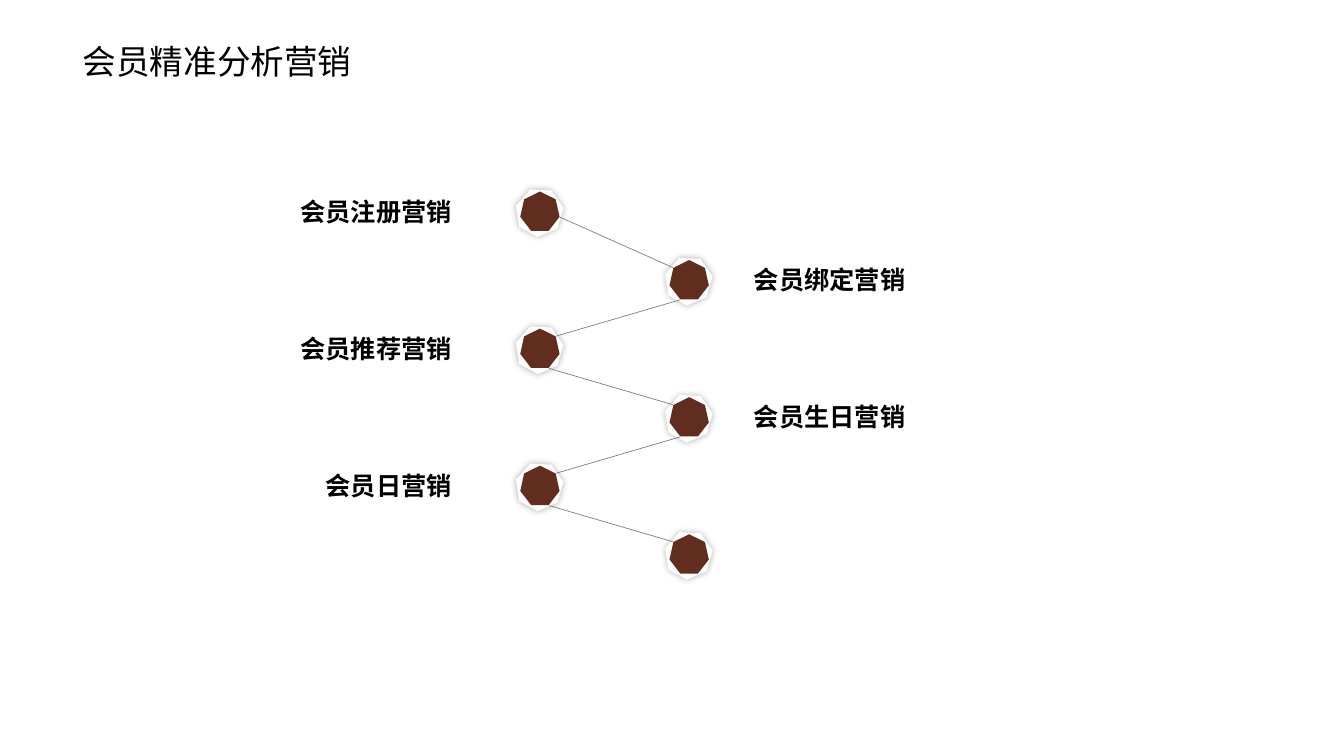
from lxml.etree import SubElement
from pptx import Presentation
from pptx.dml.color import RGBColor
from pptx.enum.shapes import MSO_CONNECTOR, MSO_SHAPE
from pptx.enum.text import MSO_ANCHOR, MSO_AUTO_SIZE, PP_ALIGN
from pptx.oxml.ns import qn
from pptx.util import Inches, Pt

BLACK = RGBColor(0x00, 0x00, 0x00)
WHITE = RGBColor(0xFF, 0xFF, 0xFF)
BROWN = RGBColor(0x61, 0x2D, 0x1F)
GREY = RGBColor(0x80, 0x80, 0x80)
FONT = "Noto Sans CJK SC"

STAGES = ["会员注册营销", "会员绑定营销", "会员推荐营销", "会员生日营销", "会员日营销", ""]
ZIGZAG_BOX = (5.16, 1.9, 1.87, 3.79)
NODE = 0.39
HALO = 0.47
LABEL_HEIGHT = 0.4


def write(frame, words, size, bold, align):
    """Put one formatted line of words into a text frame."""
    frame.text = words
    frame.word_wrap = True
    frame.auto_size = MSO_AUTO_SIZE.NONE
    frame.vertical_anchor = MSO_ANCHOR.MIDDLE
    line = frame.paragraphs[0]
    line.alignment = align
    font = line.runs[0].font
    font.size, font.bold, font.name = Pt(size), bold, FONT
    font.color.rgb = BLACK
    SubElement(line.runs[0]._r.get_or_add_rPr(), qn("a:ea"), typeface=FONT)


def add_heading(slide, words, left, top, width, height):
    """Place the slide title in its box."""
    title = slide.shapes.title
    title.left, title.top = Inches(left), Inches(top)
    title.width, title.height = Inches(width), Inches(height)
    write(title.text_frame, words, 24, False, PP_ALIGN.LEFT)


def add_heptagon(slide, x, y, size, color):
    """Draw a plain heptagon centred on a point."""
    heptagon = slide.shapes.add_shape(
        MSO_SHAPE.HEPTAGON, Inches(x - size / 2), Inches(y - size / 2),
        Inches(size), Inches(size))
    heptagon.shadow.inherit = False
    heptagon.fill.solid()
    heptagon.fill.fore_color.rgb = color
    heptagon.line.fill.background()
    return heptagon


def add_node(slide, x, y):
    """Draw a brown node on a white halo with a soft shadow."""
    halo = add_heptagon(slide, x, y, HALO, WHITE)
    halo.rotation = 29
    effects = halo._element.spPr.find(qn("a:effectLst"))
    shadow = SubElement(effects, qn("a:outerShdw"), blurRad=str(Pt(5)), dist="0")
    tone = SubElement(shadow, qn("a:srgbClr"), val="000000")
    SubElement(tone, qn("a:alpha"), val="30000")
    add_heptagon(slide, x, y, NODE, BROWN)


def add_label(slide, words, left, y, width, align):
    """Write a stage name centred vertically on its node."""
    label = slide.shapes.add_textbox(
        Inches(left), Inches(y - LABEL_HEIGHT / 2), Inches(width), Inches(LABEL_HEIGHT))
    write(label.text_frame, words, 18, True, align)


def add_link(slide, start, end):
    """Draw a thin line between two points."""
    link = slide.shapes.add_connector(
        MSO_CONNECTOR.STRAIGHT, *(Inches(length) for length in (*start, *end)))
    link.line.color.rgb = GREY
    link.line.width = Pt(0.5)
    SubElement(link._element.spPr, qn("a:effectLst"))


def add_zigzag(slide, stages, left, top, width, height):
    """Lay the stages out alternately on the two sides of the box."""
    right = left + width
    columns = (left + NODE / 2, right - NODE / 2)
    step = (height - NODE) / (len(stages) - 1)
    nodes = [(columns[i % 2], top + NODE / 2 + i * step) for i in range(len(stages))]
    for i, (stage, (x, y)) in enumerate(zip(stages, nodes)):
        add_node(slide, x, y)
        if stage and i % 2:
            add_label(slide, stage, right + 0.35, y, 2.47, PP_ALIGN.LEFT)
        elif stage:
            add_label(slide, stage, left - 2.61, y, 2.03, PP_ALIGN.RIGHT)
    for i, ((x, y), (next_x, next_y)) in enumerate(zip(nodes, nodes[1:])):
        toward = -1 if i % 2 else 1
        reach, drop = (0.09, 0.2) if i else (0.2, 0.06)
        add_link(slide, (x + toward * reach, y + drop),
                 (next_x - toward * 0.16, next_y - 0.12))


def main():
    """Build and save the slide."""
    deck = Presentation()
    deck.slide_width, deck.slide_height = Inches(13.33), Inches(7.5)
    slide = deck.slides.add_slide(deck.slide_layouts[5])
    add_heading(slide, "会员精准分析营销", 0.72, 0.36, 8.69, 0.5)
    add_zigzag(slide, STAGES, *ZIGZAG_BOX)
    deck.save("out.pptx")


if __name__ == "__main__":
    main()
